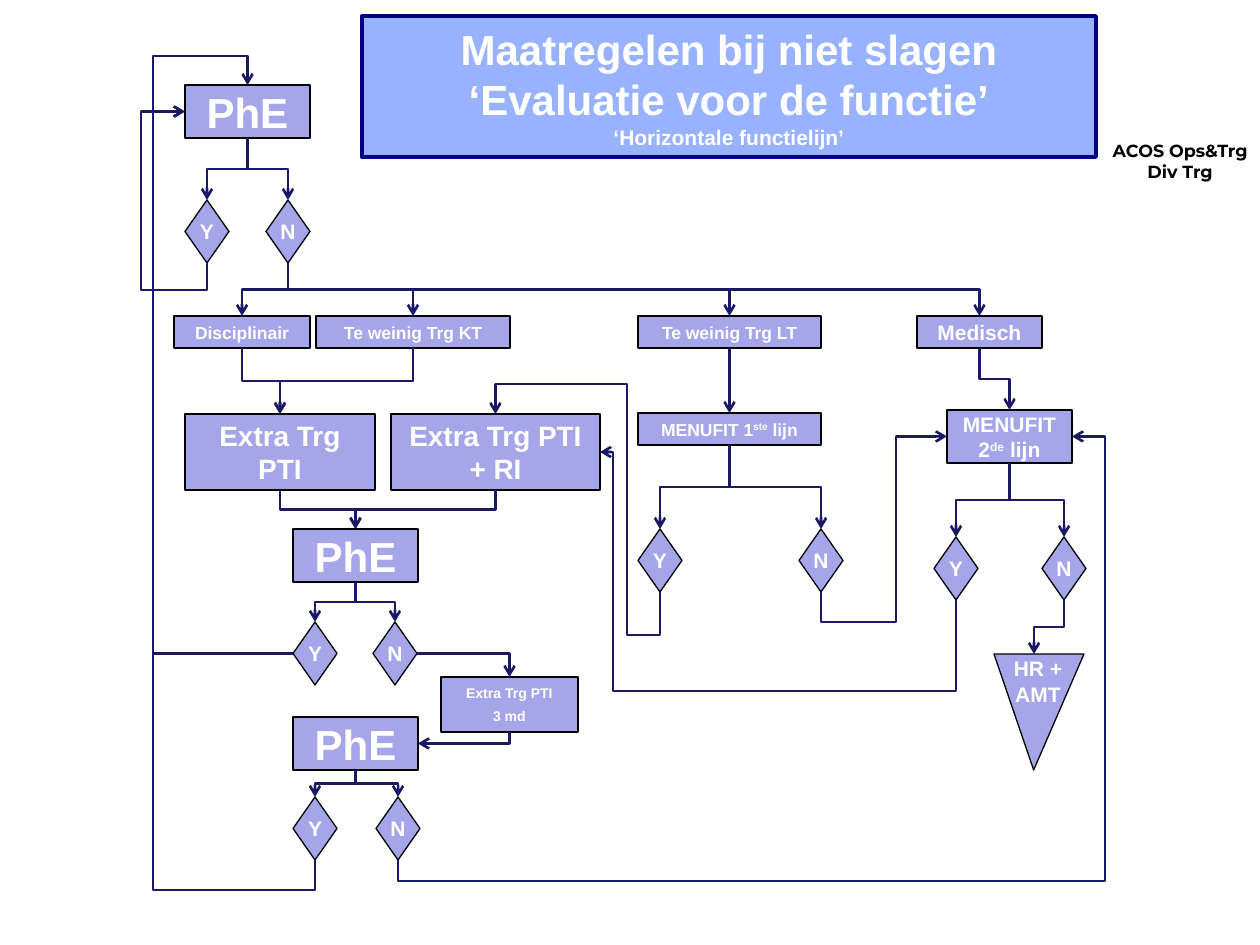
from lxml.etree import SubElement
from pptx import Presentation
from pptx.dml.color import RGBColor
from pptx.enum.shapes import MSO_CONNECTOR as Connector, MSO_SHAPE as Preset
from pptx.enum.text import MSO_ANCHOR as Anchor, MSO_AUTO_SIZE as AutoSize, PP_ALIGN as Align
from pptx.oxml.ns import qn
from pptx.util import Pt

SCALE = 914400 / 126
TOP, LEFT, BOTTOM, RIGHT = range(4)
NODE_FILL = RGBColor(0xA5, 0xA5, 0xE9)
TITLE_FILL = RGBColor(0x33, 0x66, 0xFF)
TITLE_LINE = RGBColor(0x00, 0x00, 0x80)
LINK = RGBColor(0x19, 0x19, 0x66)
WHITE = RGBColor(0xFF, 0xFF, 0xFF)
BLACK = RGBColor(0x00, 0x00, 0x00)


def emu(*lengths):
    return [round(length * SCALE) for length in lengths]


def side(shape, index):
    left, top, width, height = [
        value / SCALE for value in (shape.left, shape.top, shape.width, shape.height)]
    return [(left + width / 2, top), (left, top + height / 2),
            (left + width / 2, top + height), (left + width, top + height / 2)][index]


def format_paragraph(paragraph, size, color=WHITE, name="Arial"):
    paragraph.alignment = Align.CENTER
    for run in paragraph.runs:
        run.font.size = Pt(size)
        run.font.bold = True
        run.font.name = name
        run.font.color.rgb = color


def write(shape, text, size):
    frame = shape.text_frame
    frame.word_wrap = True
    frame.vertical_anchor = Anchor.MIDDLE
    frame.margin_top = frame.margin_bottom = 0
    for index, line in enumerate(text.split("\n")):
        paragraph = frame.add_paragraph() if index else frame.paragraphs[0]
        for part, words in enumerate(line.split("^")):
            run = paragraph.add_run()
            run.text = words
            if part % 2:
                run._r.get_or_add_rPr().set("baseline", "30000")
        format_paragraph(paragraph, size)
        if index:
            paragraph.space_before = Pt(size * 0.5)


def add_node(slide, box, text="", size=12, preset=Preset.RECTANGLE):
    shape = slide.shapes.add_shape(preset, *emu(*box))
    shape.shadow.inherit = False
    shape.fill.solid()
    shape.fill.fore_color.rgb = NODE_FILL
    shape.line.color.rgb = BLACK
    shape.line.width = Pt(0.75)
    if text:
        write(shape, text, size)
    return shape


def add_answer(slide, left, top, letter):
    diamond = add_node(slide, (left, top, 44, 63), letter, 12, Preset.DIAMOND)
    diamond.text_frame.margin_left = diamond.text_frame.margin_right = 0
    return diamond


def style_link(connector):
    connector.line.color.rgb = LINK
    connector.line.width = Pt(1.5)
    SubElement(connector.line._get_or_add_ln(), qn("a:tailEnd"), type="arrow")
    SubElement(connector._element.spPr, qn("a:effectLst"))


def add_straight(slide, source, target):
    connector = slide.shapes.add_connector(Connector.STRAIGHT, 0, 0, 0, 0)
    connector.begin_connect(source, BOTTOM)
    connector.end_connect(target, TOP)
    style_link(connector)


def add_elbow(slide, start, end, bends, vertical=True):
    delta = [end[0] - start[0], end[1] - start[1]]
    width, height = abs(delta[0]), abs(delta[1])
    backward, upward = delta[0] < 0, delta[1] < 0
    if vertical:
        width, height = height, width
        rotation, flips = 90, (upward, not backward)
        if flips == (False, True):
            rotation, flips = 270, (True, False)
    else:
        rotation, flips = 180 * backward, (False, backward != upward)
    left = (start[0] + end[0] - width) / 2
    top = (start[1] + end[1] - height) / 2
    connector = slide.shapes.add_connector(
        Connector.ELBOW, *emu(left, top, left + width, top + height))
    properties = connector._element.spPr
    transform = properties.find(qn("a:xfrm"))
    transform.set("rot", str(rotation * 60000))
    for name, flipped in zip(("flipH", "flipV"), flips):
        transform.set(name, str(int(flipped)))
    geometry = properties.find(qn("a:prstGeom"))
    geometry.set("prst", f"bentConnector{len(bends) + 2}")
    guides = geometry.find(qn("a:avLst"))
    for index, bend in enumerate(bends):
        axis = (index + vertical) % 2
        ratio = round((bend - start[axis]) / delta[axis] * 100000)
        SubElement(guides, qn("a:gd"), name=f"adj{index + 1}", fmla=f"val {ratio}")
    style_link(connector)


def add_branch(slide, source, target):
    start, end = side(source, BOTTOM), side(target, TOP)
    add_elbow(slide, start, end, [(start[1] + end[1]) / 2])


def add_decision(slide, box, text, size, yes_offset, no_offset, drop):
    left, top = box[:2]
    check = add_node(slide, box, text, size)
    answers = [add_answer(slide, left + offset, top + drop, letter)
               for letter, offset in (("Y", yes_offset), ("N", no_offset))]
    for answer in answers:
        add_branch(slide, check, answer)
    return check, *answers


def add_header(slide, box):
    left, top, width, height = box
    title = slide.shapes.title
    title.left, title.top, title.width, title.height = emu(*box)
    title.fill.solid()
    title.fill.fore_color.rgb = TITLE_FILL
    color = title._element.spPr.find(qn("a:solidFill"))[0]
    SubElement(color, qn("a:alpha"), val="50000")
    title.line.color.rgb = TITLE_LINE
    title.line.width = Pt(2.25)
    frame = title.text_frame
    frame.text = "Maatregelen bij niet slagen\v‘Evaluatie voor de functie’\n‘Horizontale functielijn’"
    frame.auto_size = AutoSize.NONE
    frame.vertical_anchor = Anchor.MIDDLE
    for paragraph, size in zip(frame.paragraphs, (24, 12)):
        format_paragraph(paragraph, size)
    office = slide.shapes.add_textbox(*emu(left + width - 1, top + height - 23, 170, 54))
    office.text_frame.text = "ACOS Ops&Trg\nDiv Trg"
    office.text_frame.word_wrap = False
    for paragraph in office.text_frame.paragraphs:
        format_paragraph(paragraph, 10, BLACK, "Montserrat")


def add_causes(slide, left, top):
    causes = [("Disciplinair", 0, 136, 10), ("Te weinig Trg KT", 142, 194, 10),
              ("Te weinig Trg LT", 464, 183, 10), ("Medisch", 743, 125, 12)]
    return [add_node(slide, (left + offset, top, width, 32), text, size)
            for text, offset, width, size in causes]


def add_trainings(slide, left, top):
    return [add_node(slide, (left + offset, top, width, 76), text, 16)
            for text, offset, width in (("Extra Trg PTI", 0, 190), ("Extra Trg PTI + RI", 206, 209))]


def add_outcome(slide, left, top):
    triangle = add_node(slide, (left, top, 90, 116), preset=Preset.ISOSCELES_TRIANGLE)
    triangle.adjustments[0] = 0.56
    triangle.rotation = 180
    label = slide.shapes.add_textbox(*emu(left - 7, top, 102, 54))
    write(label, "HR + AMT", 12)
    return left + 40, top


def build_flow(slide):
    first, first_yes, first_no = add_decision(slide, (185, 85, 125, 53), "PhE", 24, 0, 81, 115)
    causes = add_causes(slide, 174, 316)
    trainings = add_trainings(slide, 185, 414)
    second, second_yes, second_no = add_decision(slide, (293, 529, 125, 53), "PhE", 24, 0, 80, 93)
    third, third_yes, third_no = add_decision(slide, (293, 717, 125, 53), "PhE", 24, 0, 83, 80)
    line1, line1_yes, line1_no = add_decision(
        slide, (638, 413, 183, 32), "MENUFIT 1^ste^ lijn", 10, 0, 161, 116)
    line2, line2_yes, line2_no = add_decision(
        slide, (947, 410, 125, 53), "MENUFIT 2^de^ lijn", 12, -13, 95, 127)
    extra = add_node(slide, (441, 677, 137, 55), "Extra Trg PTI\n3 md", 8)
    outcome = add_outcome(slide, 994, 654)

    for cause in causes:
        add_branch(slide, first_no, cause)
    for cause in causes[:2]:
        add_branch(slide, cause, trainings[0])
    for training in trainings:
        add_branch(slide, training, second)
    add_straight(slide, causes[2], line1)
    add_branch(slide, causes[3], line2)

    for source, target, target_side, bends in (
            (first_yes, first, LEFT, [290, 141]),
            (third_yes, first, LEFT, [890, 153]),
            (line1_yes, trainings[1], TOP, [635, 627, 384]),
            (line1_no, line2, LEFT, [622, 896]),
            (line2_yes, trainings[1], RIGHT, [691, 613]),
            (third_no, line2, RIGHT, [881, 1105]),
            (extra, third, RIGHT, [])):
        add_elbow(slide, side(source, BOTTOM), side(target, target_side), bends)
    add_elbow(slide, side(second_yes, LEFT), side(first, TOP), [153, 56], False)
    add_elbow(slide, side(second_no, RIGHT), side(extra, TOP), [], False)
    add_elbow(slide, side(line2_no, BOTTOM), outcome, [627])


def main():
    presentation = Presentation()
    presentation.slide_width, presentation.slide_height = emu(1260, 945)
    slide = presentation.slides.add_slide(presentation.slide_layouts[5])
    add_header(slide, (362, 16, 734, 141))
    build_flow(slide)
    presentation.save("out.pptx")


if __name__ == "__main__":
    main()
